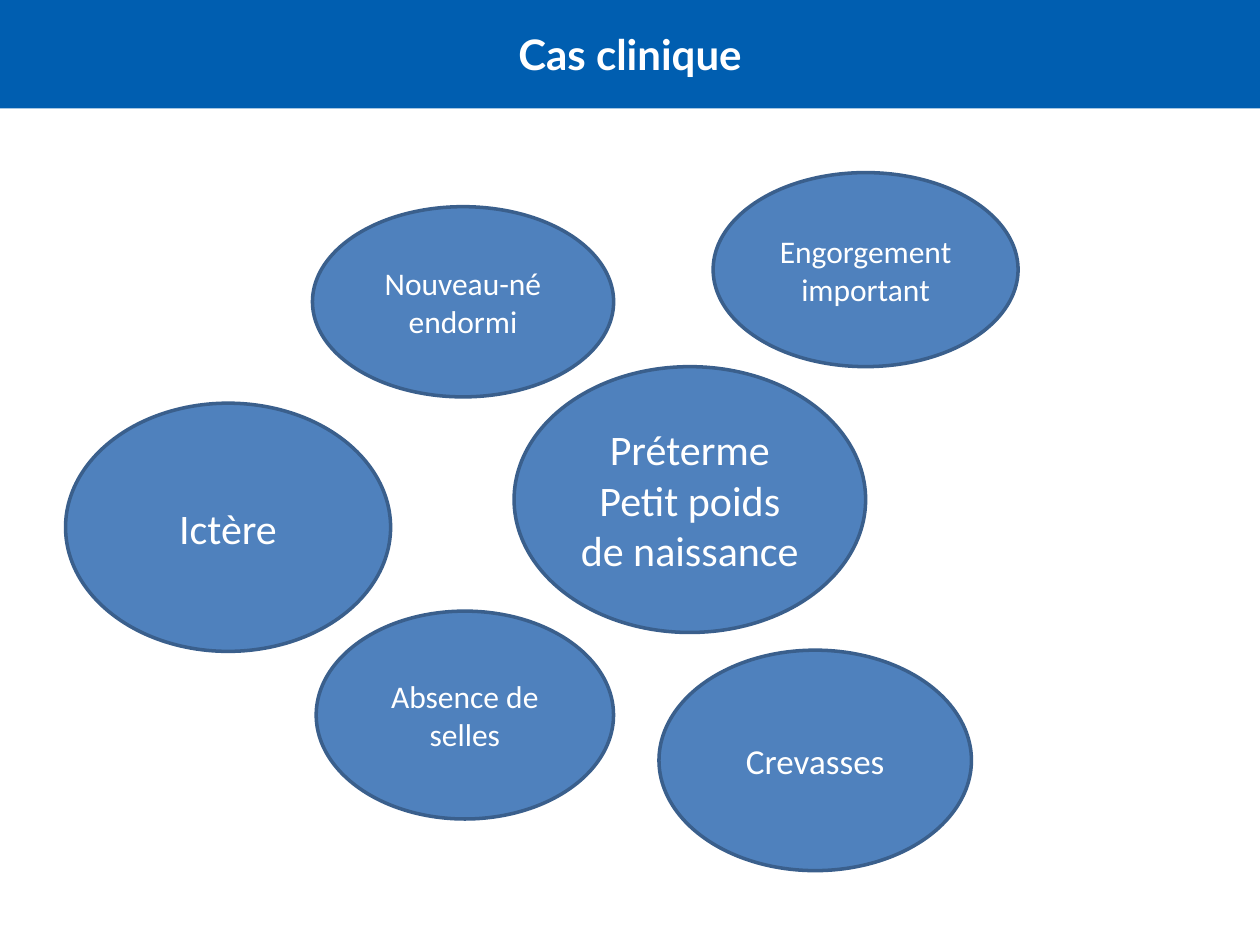
"""Build the clinical case slide: a title band above six ovals of signs."""
from dataclasses import dataclass

from pptx import Presentation
from pptx.dml.color import RGBColor as Rgb
from pptx.enum.shapes import MSO_SHAPE as Shape
from pptx.enum.text import MSO_ANCHOR as Anchor, MSO_AUTO_SIZE as Fit, PP_ALIGN as Align
from pptx.util import Inches, Pt

TITLE = "Cas clinique"
BAND = (0, 0, 10, 0.86)
SIGNS = [
    (["Préterme", "Petit poids de naissance"], "large", (4.08, 2.91, 2.79, 2.11)),
    (["Ictère"], "large", (0.52, 3.2, 2.58, 1.97)),
    (["Absence de selles"], "small", (2.51, 4.85, 2.36, 1.65)),
    (["Nouveau-né endormi"], "small", (2.48, 1.64, 2.39, 1.51)),
    (["Crevasses"], "mid", (5.23, 5.16, 2.48, 1.75)),
    (["Engorgement important"], "small", (5.66, 1.37, 2.42, 1.54)),
]


@dataclass(frozen=True)
class Theme:
    """Hold the colours, fonts and type sizes."""
    band: str = "005EB0"
    oval: str = "4F81BD"
    edge: str = "3A5F8C"
    text: str = "FFFFFF"
    head: str = "Lato"
    body: str = "Calibri"
    large: int = 24
    mid: int = 20
    small: int = 18
    line: int = 2


THEME = Theme()


def paint(shape, hue):
    """Fill a shape with one colour."""
    shape.fill.solid()
    shape.fill.fore_color.rgb = Rgb.from_string(hue)


def write(shape, lines, font, size, bold=False):
    """Write centred lines of text in a shape."""
    frame = shape.text_frame
    frame.word_wrap = True
    frame.auto_size = Fit.NONE
    frame.vertical_anchor = Anchor.MIDDLE
    for i, line in enumerate(lines):
        para = frame.add_paragraph() if i else frame.paragraphs[0]
        para.alignment = Align.CENTER
        run = para.add_run()
        run.text = line
        run.font.name = font
        run.font.size = Pt(size)
        run.font.bold = bold
        run.font.color.rgb = Rgb.from_string(THEME.text)


def add_band(slide):
    """Turn the title placeholder into the top band."""
    band = slide.shapes.title
    band.left, band.top, band.width, band.height = map(Inches, BAND)
    paint(band, THEME.band)
    write(band, [TITLE], THEME.head, THEME.large, True)


def add_oval(slide, lines, level, box):
    """Add one oval with its sign."""
    oval = slide.shapes.add_shape(Shape.OVAL, *map(Inches, box))
    oval.shadow.inherit = False
    paint(oval, THEME.oval)
    oval.line.color.rgb = Rgb.from_string(THEME.edge)
    oval.line.width = Pt(THEME.line)
    write(oval, lines, THEME.body, getattr(THEME, level))


def main():
    """Build and save the deck."""
    deck = Presentation()
    deck.slide_width, deck.slide_height = Inches(10), Inches(7.5)
    slide = deck.slides.add_slide(deck.slide_layouts[5])
    add_band(slide)
    for sign in SIGNS:
        add_oval(slide, *sign)
    deck.save("out.pptx")


if __name__ == "__main__":
    main()
